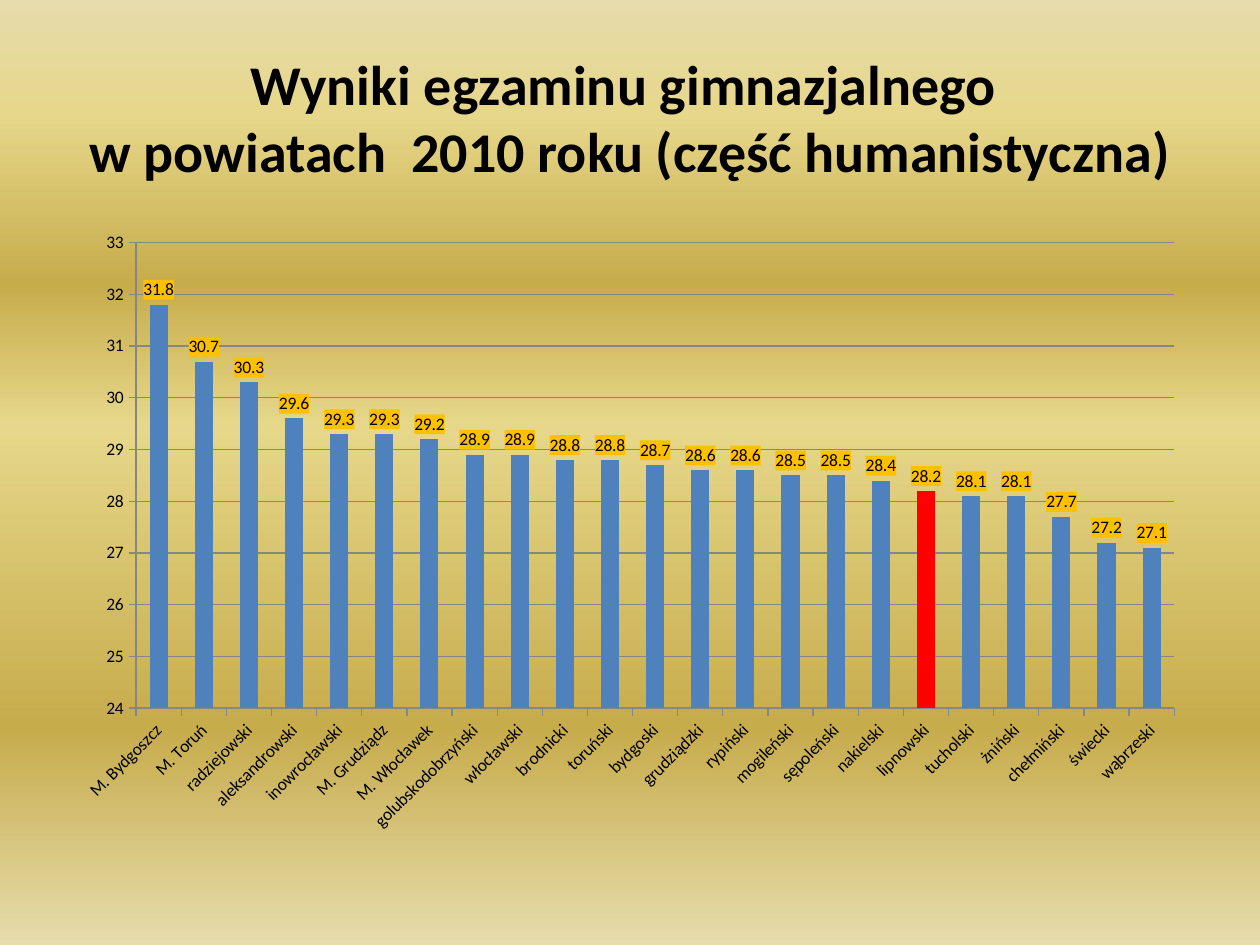
from lxml.etree import SubElement
from pptx import Presentation
from pptx.chart.data import CategoryChartData
from pptx.dml.color import RGBColor
from pptx.enum.chart import XL_CHART_TYPE, XL_LABEL_POSITION, XL_TICK_MARK
from pptx.enum.text import MSO_ANCHOR, PP_ALIGN
from pptx.oxml import parse_xml
from pptx.oxml.ns import nsdecls, qn
from pptx.util import Cm, Pt

BLACK = RGBColor(0x00, 0x00, 0x00)
BLUE = RGBColor(0x4F, 0x81, 0xBD)
RED = RGBColor(0xFF, 0x00, 0x00)
AMBER = RGBColor(0xFF, 0xC0, 0x00)
GREY = RGBColor(0x86, 0x86, 0x86)
CREAM = RGBColor(0xE6, 0xDC, 0xAC)
STRAW = RGBColor(0xE6, 0xD7, 0x8A)
GOLD = RGBColor(0xC7, 0xAC, 0x4C)

STOPS = [(0, CREAM), (12, STRAW), (30, GOLD), (45, STRAW), (77, GOLD), (100, CREAM)]
RESULTS = [
    ("M. Bydgoszcz", 31.8), ("M. Toruń", 30.7), ("radziejowski", 30.3),
    ("aleksandrowski", 29.6), ("inowrocławski", 29.3), ("M. Grudziądz", 29.3),
    ("M. Włocławek", 29.2), ("golubskodobrzyński", 28.9), ("włocławski", 28.9),
    ("brodnicki", 28.8), ("toruński", 28.8), ("bydgoski", 28.7),
    ("grudziądzki", 28.6), ("rypiński", 28.6), ("mogileński", 28.5),
    ("sępoleński", 28.5), ("nakielski", 28.4), ("lipnowski", 28.2),
    ("tucholski", 28.1), ("żniński", 28.1), ("chełmiński", 27.7),
    ("świecki", 27.2), ("wąbrzeski", 27.1),
]

prs = Presentation()
prs.slide_width, prs.slide_height = Cm(25.4), Cm(19.05)
s = prs.slides.add_slide(prs.slide_layouts[6])

fill = s.background.fill
fill.gradient()
fill.gradient_angle = 270
gs_lst = next(s.background._cSld.iter(qn("a:gsLst")))
for gs in list(gs_lst):
    gs_lst.remove(gs)
for pos, color in STOPS:
    gs = SubElement(gs_lst, qn("a:gs"), pos=str(pos * 1000))
    SubElement(gs, qn("a:srgbClr"), val=str(color))

tf = s.shapes.add_textbox(Cm(1.27), Cm(0.76), Cm(22.86), Cm(3.18)).text_frame
tf.word_wrap = True
tf.vertical_anchor = MSO_ANCHOR.MIDDLE
p = tf.paragraphs[0]
p.text = "Wyniki egzaminu gimnazjalnego \vw powiatach  2010 roku (część humanistyczna)"
p.alignment = PP_ALIGN.CENTER
p.font.name, p.font.size, p.font.bold = "Calibri", Pt(32), True
p.font.color.rgb = BLACK

data = CategoryChartData()
data.categories = [name for name, score in RESULTS]
data.add_series("Series 1", [score for name, score in RESULTS])
chart = s.shapes.add_chart(
    XL_CHART_TYPE.COLUMN_CLUSTERED, Cm(1.27), Cm(4.44), Cm(22.86), Cm(12.57), data
).chart
chart.has_legend = False
chart.has_title = False
chart.font.name, chart.font.size = "Calibri", Pt(10)
chart.font.color.rgb = BLACK

cat_axis, val_axis = chart.category_axis, chart.value_axis
for axis in (cat_axis, val_axis):
    axis.major_tick_mark = XL_TICK_MARK.OUTSIDE
    axis.minor_tick_mark = XL_TICK_MARK.NONE
    axis.format.line.color.rgb = GREY
val_axis.minimum_scale, val_axis.maximum_scale, val_axis.major_unit = 24, 33, 1
val_axis.major_gridlines.format.line.color.rgb = GREY

plot = chart.plots[0]
plot.gap_width = 150
plot.vary_by_categories = False
bars = plot.series[0]
bars.format.fill.solid()
bars.format.fill.fore_color.rgb = BLUE
lipnowski = bars.points[[name for name, score in RESULTS].index("lipnowski")]
lipnowski.format.fill.solid()
lipnowski.format.fill.fore_color.rgb = RED

labels = bars.data_labels
labels.show_value = True
labels.position = XL_LABEL_POSITION.OUTSIDE_END
labels.font.size = Pt(10)
labels._element.find(qn("c:txPr")).addprevious(parse_xml(
    f'<c:spPr {nsdecls("c", "a")}><a:solidFill><a:srgbClr val="{AMBER}"/></a:solidFill></c:spPr>'
))

prs.save("out.pptx")
